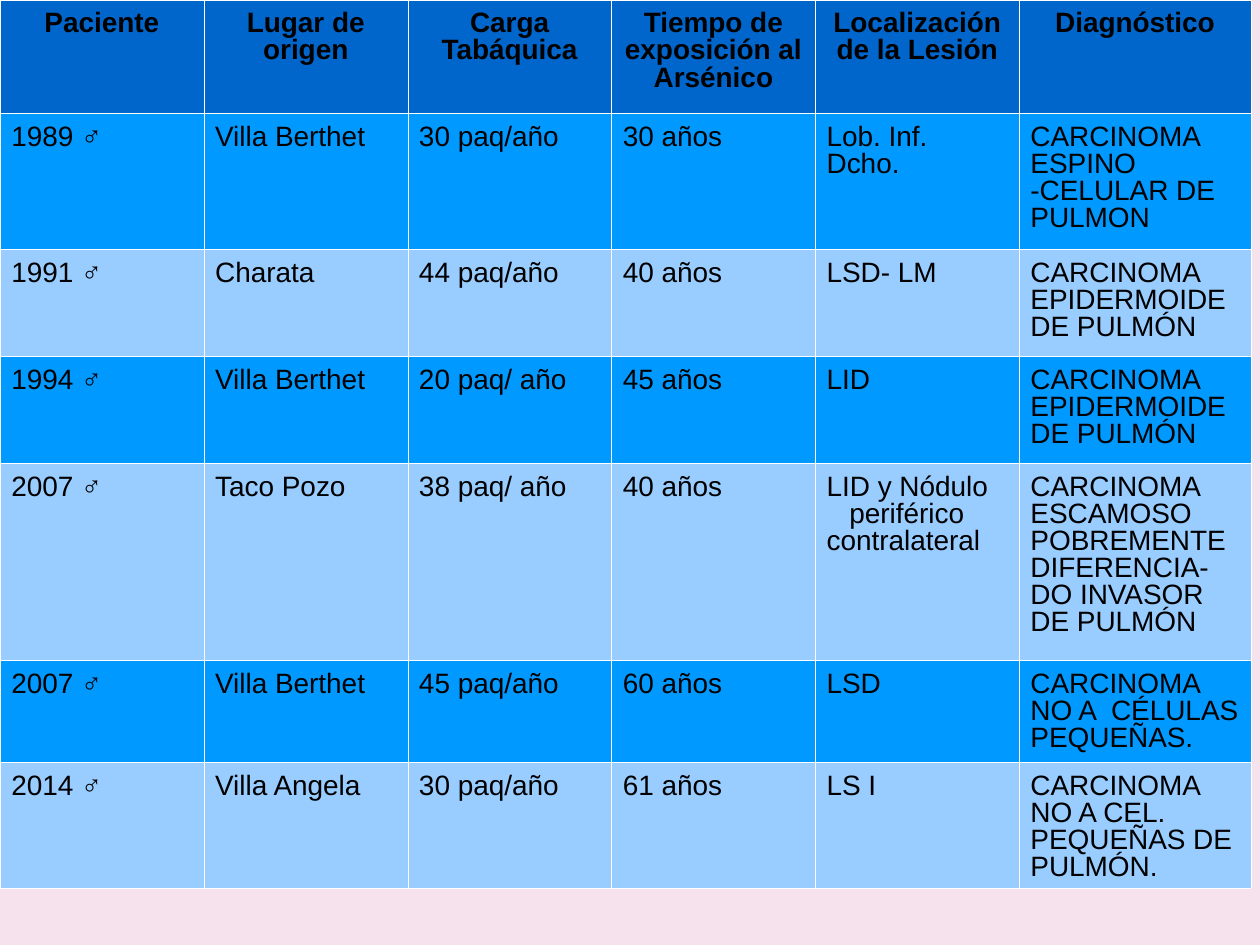
from dataclasses import dataclass

from lxml.etree import SubElement
from pptx import Presentation
from pptx.dml.color import RGBColor
from pptx.enum.text import PP_ALIGN
from pptx.oxml.ns import qn
from pptx.util import Inches, Pt


@dataclass(frozen=True)
class Theme:
    background: str = "F5E2ED"
    header: str = "0066CC"
    bands: tuple = ("0099FF", "99CCFF")
    border: str = "FFFFFF"
    text: str = "000000"
    font: str = "Arial"
    size: int = 16
    line_spacing: float = 0.87
    border_width: float = 0.11
    margin: float = 0.09
    bottom_margin: float = 0.05
    indent: float = 0.18


class SlideBuilder:
    def __init__(self, presentation, theme):
        self.theme = theme
        self.width = presentation.slide_width
        self.height = presentation.slide_height
        self.slide = presentation.slides.add_slide(presentation.slide_layouts[6])
        self.fill(self.slide.background, theme.background)

    def fill(self, target, color):
        target.fill.solid()
        target.fill.fore_color.rgb = RGBColor.from_string(color)

    def table(self, records, column_percents, row_percents):
        widths = [int(self.width * percent / 100) for percent in column_percents]
        heights = [int(self.height * percent / 100) for percent in row_percents]
        table = self.slide.shapes.add_table(
            len(heights), len(widths), 0, 0, sum(widths), sum(heights)
        ).table
        table.horz_banding = False
        for column, width in zip(table.columns, widths):
            column.width = width
        for row, height in zip(table.rows, heights):
            row.height = height
        for row_index, record in enumerate(records):
            for column_index, text in enumerate(record):
                self.cell(table.cell(row_index, column_index), text, row_index)

    def cell(self, cell, text, row_index):
        theme = self.theme
        is_header = row_index == 0
        cell.margin_left = cell.margin_right = cell.margin_top = Inches(theme.margin)
        cell.margin_bottom = Inches(theme.bottom_margin)
        cell.text_frame.text = text
        for paragraph in cell.text_frame.paragraphs:
            self.paragraph(paragraph, is_header)
        self.borders(cell)
        self.fill(cell, theme.header if is_header else theme.bands[(row_index - 1) % 2])

    def paragraph(self, paragraph, is_header):
        theme = self.theme
        paragraph.alignment = PP_ALIGN.CENTER if is_header else PP_ALIGN.LEFT
        paragraph.line_spacing = theme.line_spacing
        if paragraph.text == INDENTED_LINE:
            paragraph._p.get_or_add_pPr().set("marL", str(Inches(theme.indent)))
        for run in paragraph.runs:
            run.font.name = theme.font
            run.font.size = Pt(theme.size)
            run.font.bold = is_header
            run.font.color.rgb = RGBColor.from_string(theme.text)

    def borders(self, cell):
        properties = cell._tc.get_or_add_tcPr()
        for side in ("lnL", "lnR", "lnT", "lnB"):
            line = SubElement(properties, qn(f"a:{side}"))
            line.set("w", str(Pt(self.theme.border_width)))
            solid_fill = SubElement(line, qn("a:solidFill"))
            SubElement(solid_fill, qn("a:srgbClr")).set("val", self.theme.border)


INDENTED_LINE = "periférico"
EPIDERMOID = "CARCINOMA EPIDERMOIDE DE PULMÓN"
PATIENTS = [
    ("Paciente", "Lugar de origen", "Carga Tabáquica",
     "Tiempo de exposición al Arsénico", "Localización de la Lesión", "Diagnóstico"),
    ("1989 ♂", "Villa Berthet", "30 paq/año", "30 años", "Lob. Inf. Dcho.",
     "CARCINOMA ESPINO -CELULAR DE PULMON"),
    ("1991 ♂", "Charata", "44 paq/año", "40 años", "LSD- LM", EPIDERMOID),
    ("1994 ♂", "Villa Berthet", "20 paq/ año", "45 años", "LID", EPIDERMOID),
    ("2007 ♂", "Taco Pozo", "38 paq/ año", "40 años",
     f"LID y Nódulo\n{INDENTED_LINE}\ncontralateral",
     "CARCINOMA ESCAMOSO POBREMENTE DIFERENCIA-DO INVASOR DE PULMÓN"),
    ("2007 ♂", "Villa Berthet", "45 paq/año", "60 años", "LSD",
     "CARCINOMA NO A  CÉLULAS PEQUEÑAS."),
    ("2014 ♂", "Villa Angela", "30 paq/año", "61 años", "LS I",
     "CARCINOMA NO A CEL. PEQUEÑAS DE PULMÓN."),
]
COLUMN_PERCENTS = [16.18] * 5 + [18.4]
ROW_PERCENTS = [12, 14.4, 11.33, 11.33, 20.8, 10.8, 10.93]


def main():
    presentation = Presentation()
    presentation.slide_width = Inches(10)
    presentation.slide_height = Inches(7.5)
    builder = SlideBuilder(presentation, Theme())
    builder.table(PATIENTS, COLUMN_PERCENTS, ROW_PERCENTS)
    presentation.save("out.pptx")


if __name__ == "__main__":
    main()
